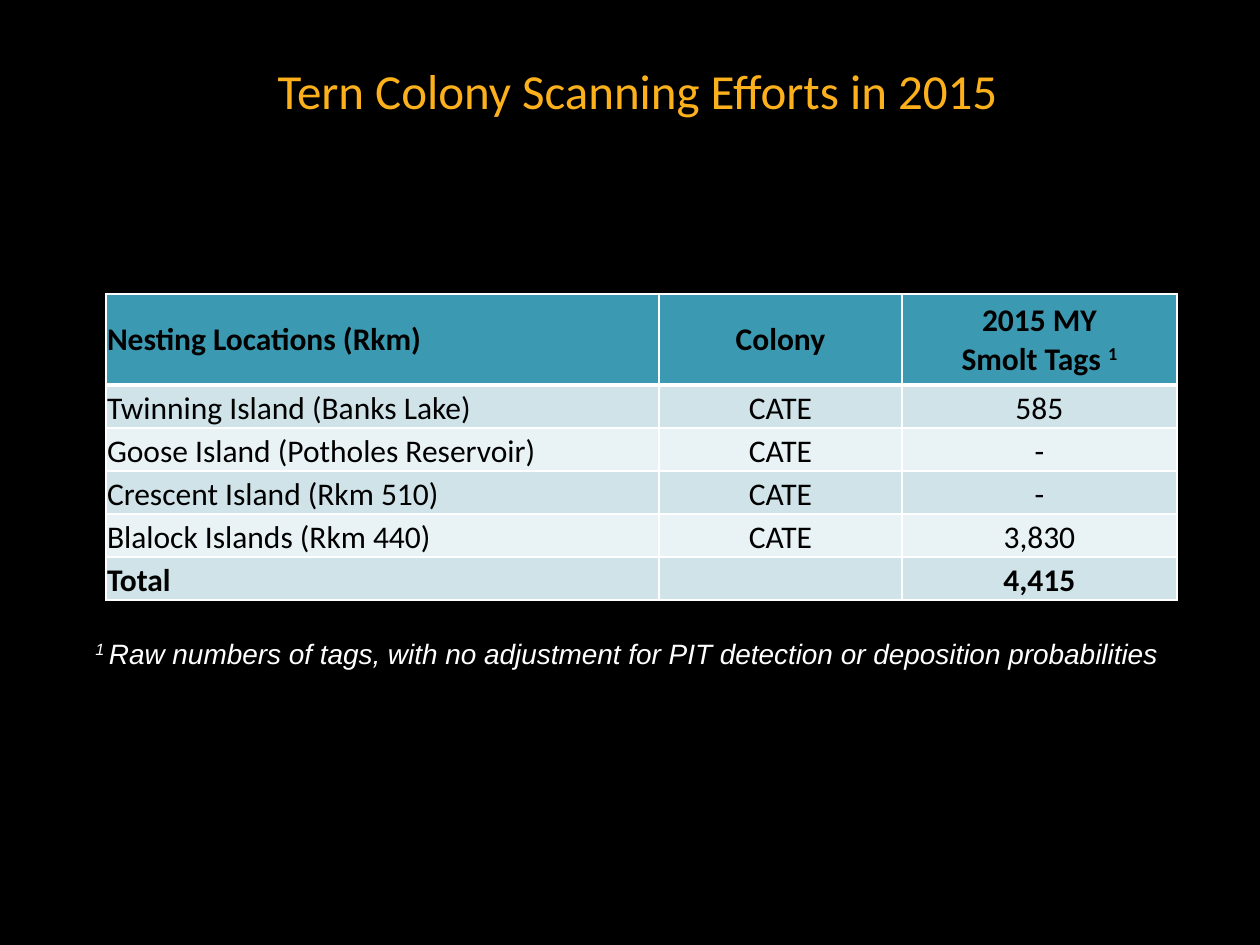
from lxml.etree import SubElement
from pptx import Presentation
from pptx.dml.color import RGBColor
from pptx.enum.text import MSO_ANCHOR as ANCHOR, PP_ALIGN as ALIGN
from pptx.oxml.ns import qn
from pptx.util import Emu, Pt

PX = 914400 // 126
BLACK = RGBColor(0x00, 0x00, 0x00)
WHITE = RGBColor(0xFF, 0xFF, 0xFF)
GOLD = RGBColor(0xFC, 0xB1, 0x1C)
TEAL = RGBColor(0x3B, 0x9A, 0xB2)
BANDS = [RGBColor(0xCF, 0xE3, 0xE8), RGBColor(0xE9, 0xF2, 0xF4)]

# Each text is a list of paragraphs; a paragraph is a list of (text, superscript).
TITLE = [[("Tern Colony Scanning Efforts in 2015 ", False)]]
FOOTNOTE = [[
    ("1 ", True),
    ("Raw numbers of tags, with no adjustment for PIT detection "
     "or deposition probabilities", False),
]]
TAGS_HEADING = [[("2015 MY", False)], [("Smolt Tags ", False), ("1", True)]]
ROWS = [
    ("Nesting Locations (Rkm)", "Colony", TAGS_HEADING),
    ("Twinning Island (Banks Lake)", "CATE", "585"),
    ("Goose Island (Potholes Reservoir)", "CATE", "-"),
    ("Crescent Island (Rkm 510)", "CATE", "-"),
    ("Blalock Islands (Rkm 440)", "CATE", "3,830"),
    ("Total", "", "4,415"),
]
COL_WIDTHS = [553, 243, 275]
HEADER_HEIGHT, ROW_HEIGHT = 91, 43
TABLE_LEFT, TABLE_TOP = 106, 294


def px(n):
    return Emu(n * PX)


def write(tf, paragraphs, size, font, color, align, bold=False, italic=False):
    for i, parts in enumerate(paragraphs):
        p = tf.add_paragraph() if i else tf.paragraphs[0]
        p.alignment = align
        for text, superscript in parts:
            r = p.add_run()
            r.text = text
            f = r.font
            f.size, f.name, f.bold, f.italic = Pt(size), font, bold, italic
            f.color.rgb = color
            if superscript:
                r._r.get_or_add_rPr().set("baseline", "30000")


def add_text(slide, box, *args, **style):
    tf = slide.shapes.add_textbox(*map(px, box)).text_frame
    tf.word_wrap = True
    write(tf, *args, **style)


def set_borders(cell, widths):
    """Draw white borders; widths maps the sides L, R, T, B to points."""
    tcPr = cell._tc.get_or_add_tcPr()
    for side, width in widths.items():
        ln = SubElement(tcPr, qn(f"a:ln{side}"), w=str(Pt(width)))
        fill = SubElement(ln, qn("a:solidFill"))
        SubElement(fill, qn("a:srgbClr"), val=str(WHITE))


def add_tag_table(slide):
    height = HEADER_HEIGHT + ROW_HEIGHT * (len(ROWS) - 1)
    table = slide.shapes.add_table(
        len(ROWS), len(COL_WIDTHS), px(TABLE_LEFT), px(TABLE_TOP),
        px(sum(COL_WIDTHS)), px(height)).table
    for column, width in zip(table.columns, COL_WIDTHS):
        column.width = px(width)
    for i, values in enumerate(ROWS):
        header = i == 0
        bold = header or i == len(ROWS) - 1
        table.rows[i].height = px(HEADER_HEIGHT if header else ROW_HEIGHT)
        for j, value in enumerate(values):
            cell = table.cell(i, j)
            cell.margin_left = cell.margin_right = cell.margin_top = px(1)
            cell.margin_bottom = 0
            cell.vertical_anchor = ANCHOR.MIDDLE if header else ANCHOR.BOTTOM
            set_borders(cell, {"L": 1, "R": 1, "T": 3 if i == 1 else 1,
                               "B": 3 if header else 1})
            cell.fill.solid()
            cell.fill.fore_color.rgb = TEAL if header else BANDS[(i - 1) % 2]
            if value:
                paragraphs = [[(value, False)]] if isinstance(value, str) else value
                write(cell.text_frame, paragraphs, 18, "Calibri", BLACK,
                      ALIGN.CENTER if j else ALIGN.LEFT, bold=bold)


prs = Presentation()
prs.slide_width, prs.slide_height = px(1260), px(945)
s = prs.slides.add_slide(prs.slide_layouts[6])
s.background.fill.solid()
s.background.fill.fore_color.rgb = BLACK

add_text(s, (81, 54, 1124, 98), TITLE, 28, "Calibri", GOLD, ALIGN.CENTER)
add_tag_table(s)
add_text(s, (83, 630, 1154, 47), FOOTNOTE, 16, "Arial", WHITE, ALIGN.LEFT,
         italic=True)
prs.save("out.pptx")
